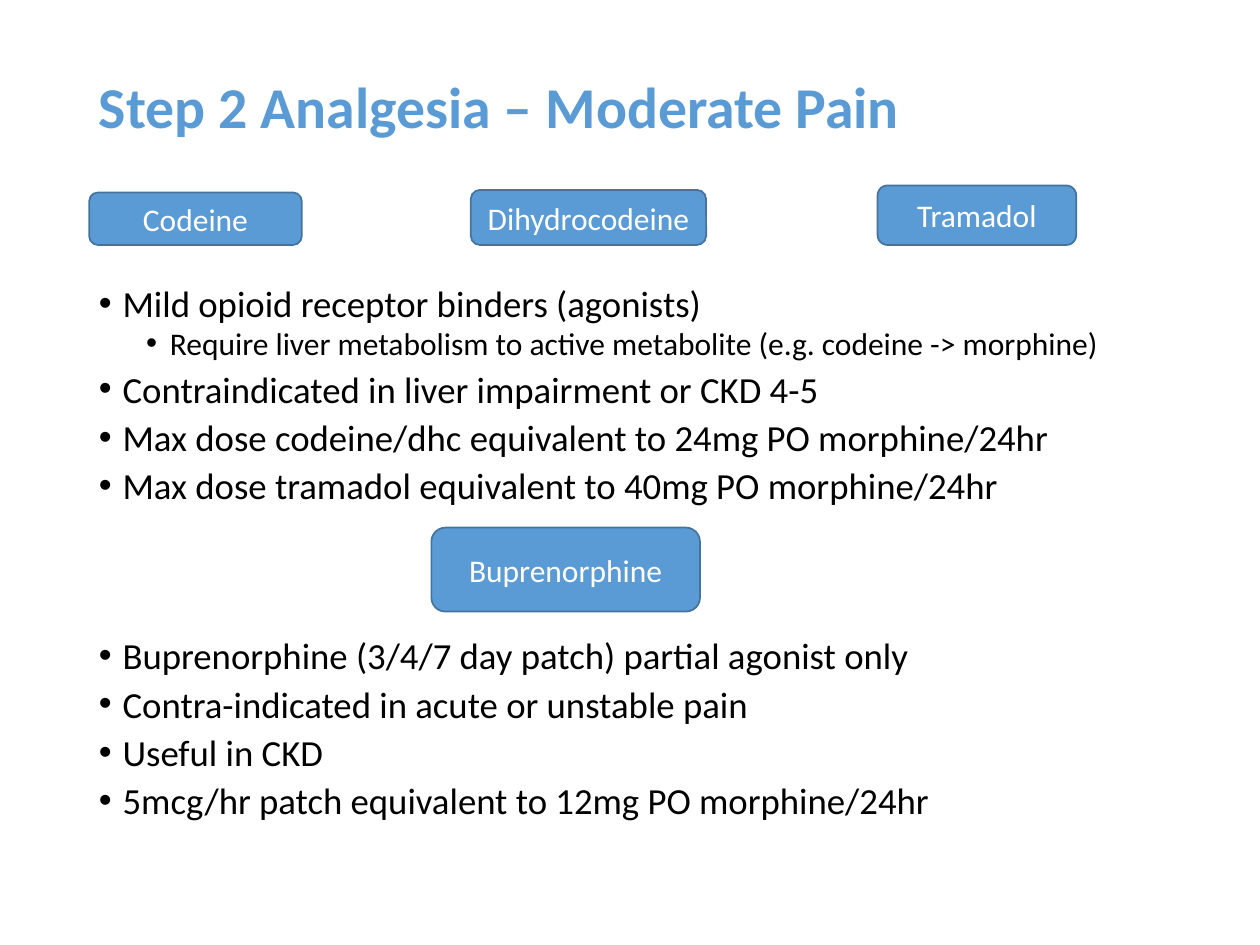
from pptx import Presentation
from pptx.dml.color import RGBColor
from pptx.enum.shapes import MSO_SHAPE
from pptx.enum.text import MSO_ANCHOR, PP_ALIGN
from pptx.util import Pt
from lxml.etree import SubElement
from pptx.oxml.ns import qn

BLUE = RGBColor(0x5B, 0x9B, 0xD5)
OUTLINE = RGBColor(0x43, 0x73, 0x9E)
BLACK = RGBColor(0, 0, 0)
WHITE = RGBColor(255, 255, 255)

HANG = 13.5
LEVELS = [  # text size, left margin, space before
    (21, 13.5, 7.5),
    (18, 40.5, 3.75),
]
DRUGS = [
    ("Codeine", (51, 110, 121.5, 30)),
    ("Dihydrocodeine", (269, 108.5, 134.5, 31.5)),
    ("Tramadol", (501.5, 106, 113.5, 34)),
    ("Buprenorphine", (246.5, 301.5, 153.5, 48)),
]
OPIOID_POINTS = [
    (0, "Mild opioid receptor binders (agonists)"),
    (1, "Require liver metabolism to active metabolite (e.g. codeine -> morphine)"),
    (0, "Contraindicated in liver impairment or CKD 4-5"),
    (0, "Max dose codeine/dhc equivalent to 24mg PO morphine/24hr"),
    (0, "Max dose tramadol equivalent to 40mg PO morphine/24hr"),
]
BUPRENORPHINE_POINTS = [
    (0, "Buprenorphine (3/4/7 day patch) partial agonist only"),
    (0, "Contra-indicated in acute or unstable pain"),
    (0, "Useful in CKD"),
    (0, "5mcg/hr patch equivalent to 12mg PO morphine/24hr"),
]


def write(para, text, size=18, color=BLACK, bold=False, align=PP_ALIGN.LEFT,
          line_spacing=1.0, before=0):
    para.alignment = align
    para.line_spacing = line_spacing
    para.space_before = Pt(before)
    span = para.add_run()
    span.text = text
    span.font.name = "Calibri"
    span.font.size = Pt(size)
    span.font.bold = bold
    span.font.color.rgb = color


def add_bullet(para, margin):
    props = para._p.get_or_add_pPr()
    props.set("marL", str(Pt(margin)))
    props.set("indent", str(Pt(-HANG)))
    SubElement(props, qn("a:buFont")).set("typeface", "Arial")
    SubElement(props, qn("a:buChar")).set("char", "•")


def text_frame(page, box, anchor=MSO_ANCHOR.TOP):
    frame = page.shapes.add_textbox(*map(Pt, box)).text_frame
    frame.word_wrap = True
    frame.vertical_anchor = anchor
    return frame


def add_title(page, box, text):
    frame = text_frame(page, box, MSO_ANCHOR.MIDDLE)
    write(frame.paragraphs[0], text, size=33, color=BLUE, bold=True,
          line_spacing=0.9)


def add_points(page, box, points):
    frame = text_frame(page, box)
    for index, (level, text) in enumerate(points):
        para = frame.add_paragraph() if index else frame.paragraphs[0]
        size, margin, before = LEVELS[level]
        para.level = level
        add_bullet(para, margin)
        write(para, text, size=size, line_spacing=0.8,
              before=before if index else 0)


def add_drug(page, box, name):
    label = page.shapes.add_shape(MSO_SHAPE.ROUNDED_RECTANGLE, *map(Pt, box))
    label.shadow.inherit = False
    label.fill.solid()
    label.fill.fore_color.rgb = BLUE
    label.line.color.rgb = OUTLINE
    label.line.width = Pt(1)
    frame = label.text_frame
    frame.word_wrap = True
    frame.vertical_anchor = MSO_ANCHOR.MIDDLE
    write(frame.paragraphs[0], name, color=WHITE, align=PP_ALIGN.CENTER)


def main():
    deck = Presentation()
    deck.slide_width, deck.slide_height = Pt(720), Pt(540)
    page = deck.slides.add_slide(deck.slide_layouts[6])

    # Title
    add_title(page, (49.5, 26, 621, 73.5), "Step 2 Analgesia – Moderate Pain")

    # Bullet lists
    add_points(page, (49.5, 162, 621, 135), OPIOID_POINTS)
    add_points(page, (49.5, 363, 621, 128), BUPRENORPHINE_POINTS)

    # Drug labels
    for name, box in DRUGS:
        add_drug(page, box, name)

    deck.save("out.pptx")


if __name__ == "__main__":
    main()
